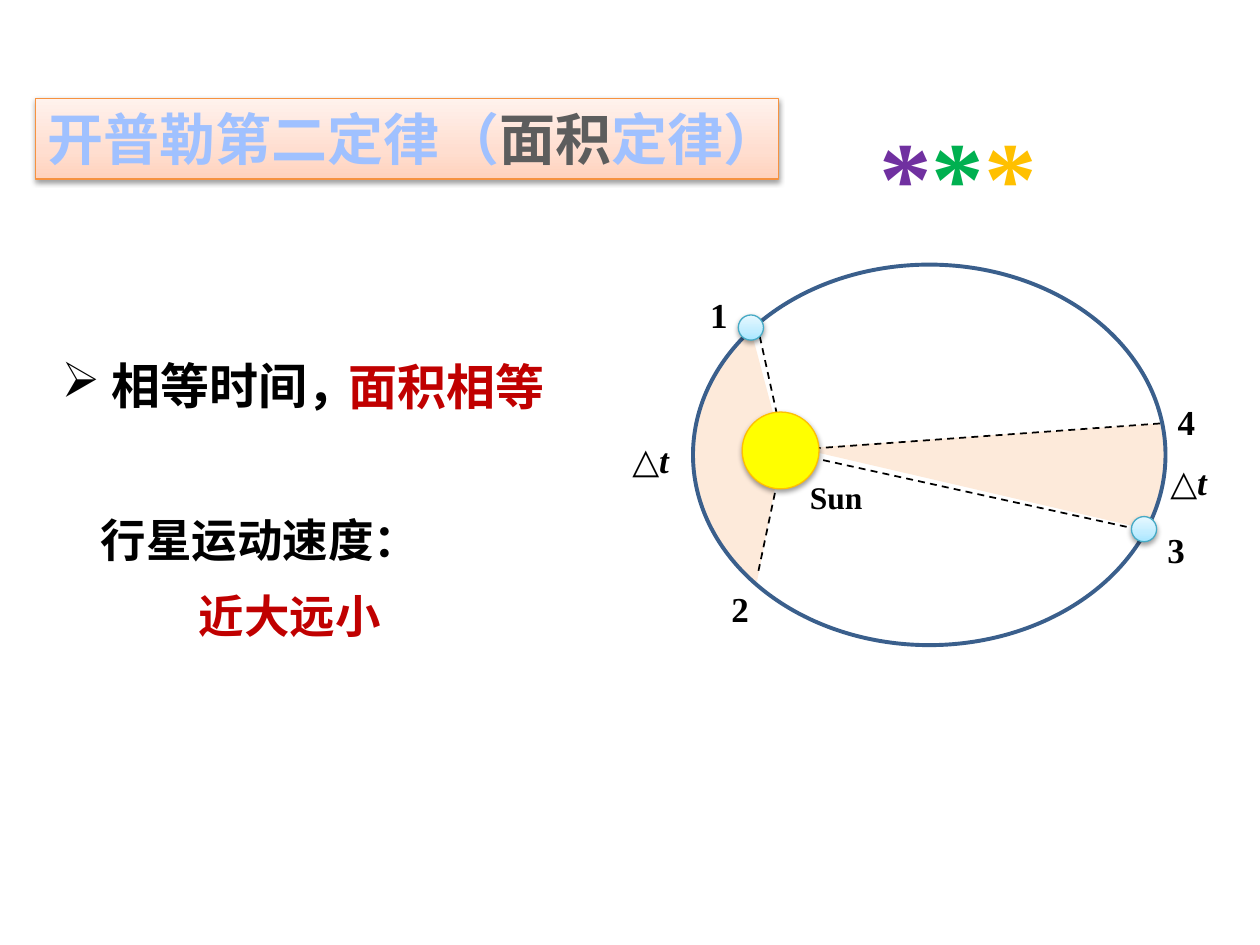
from copy import deepcopy
from math import cos, radians, sin

from lxml.etree import SubElement
from pptx import Presentation
from pptx.dml.color import RGBColor
from pptx.enum.dml import MSO_LINE_DASH_STYLE as Dash
from pptx.enum.shapes import MSO_CONNECTOR as Connector, MSO_SHAPE as Shape
from pptx.enum.text import MSO_ANCHOR as Anchor, MSO_AUTO_SIZE as AutoSize, PP_ALIGN as Align
from pptx.oxml.ns import qn
from pptx.util import Inches, Pt

BLACK = RGBColor(0x00, 0x00, 0x00)
RED = RGBColor(0xC0, 0x00, 0x00)
PURPLE = RGBColor(0x70, 0x30, 0xA0)
GREEN = RGBColor(0x00, 0xB0, 0x50)
GOLD = RGBColor(0xFF, 0xC0, 0x00)
YELLOW = RGBColor(0xFF, 0xFF, 0x00)
TITLE_BLUE = RGBColor(0xA0, 0xC1, 0xFF)
TITLE_GREY = RGBColor(0x5D, 0x5D, 0x5D)
ORBIT_BLUE = RGBColor(0x3A, 0x5F, 0x8C)
PLANET_EDGE = RGBColor(0x46, 0xAA, 0xC5)
BANNER_EDGE = RGBColor(0xF6, 0x92, 0x40)
SECTOR_PEACH = RGBColor(0xFD, 0xEA, 0xDA)
# Gradients run from the bottom edge to the top edge.
PLANET_FILL = (RGBColor(0xA7, 0xE6, 0xFF), RGBColor(0xC1, 0xED, 0xFF), RGBColor(0xE7, 0xF8, 0xFF))
BANNER_FILL = (RGBColor(0xFF, 0xD2, 0xBD), RGBColor(0xFF, 0xDE, 0xD0), RGBColor(0xFF, 0xF2, 0xED))

COLUMNS, ROWS = 100, 75
ORBIT = (55, 21, 37.5, 30.2)


class Page:
    """A slide on a grid of COLUMNS by ROWS, with one style for all its elements."""

    font_name = "Times New Roman"
    stop_positions = (0, 0.35, 1)

    def __init__(self, deck):
        self.column = deck.slide_width / COLUMNS
        self.row = deck.slide_height / ROWS
        self.slide = deck.slides.add_slide(deck.slide_layouts[5])
        self.shapes = self.slide.shapes

    def point(self, x, y):
        return round(x * self.column), round(y * self.row)

    def area(self, left, top, width, height):
        return *self.point(left, top), *self.point(width, height)

    def add_spans(self, para, spans, size):
        """Add (text, colour, italic) spans to a paragraph."""
        for text, colour, *italic in spans:
            span = para.add_run()
            span.text = text
            font = span.font
            font.name, font.size, font.bold = self.font_name, Pt(size), True
            font.color.rgb = colour
            if italic:
                font.italic = italic[0]

    def title(self, area, spans, size):
        banner = self.shapes.title
        banner.left, banner.top, banner.width, banner.height = self.area(*area)
        self.gradient(banner, BANNER_FILL)
        self.outline(banner, BANNER_EDGE, 0.75)
        self.shadow(banner)
        frame = banner.text_frame
        frame.auto_size, frame.vertical_anchor = AutoSize.NONE, Anchor.TOP
        para = frame.paragraphs[0]
        para.alignment = Align.LEFT
        self.add_spans(para, spans, size)

    def text(self, area, spans, size, spacing=1.25, align=Align.LEFT, wrap=True, bullet=None):
        box = self.shapes.add_textbox(*self.area(*area))
        box.text_frame.word_wrap = wrap
        para = box.text_frame.paragraphs[0]
        para.alignment, para.line_spacing = align, spacing
        if bullet:
            SubElement(para._p.get_or_add_pPr(), qn("a:buChar"), char=bullet)
        self.add_spans(para, spans, size)

    def ellipse(self, area, edge, weight, fill=None, raised=True):
        oval = self.shapes.add_shape(Shape.OVAL, *self.area(*area))
        if fill is None:
            oval.fill.background()
        elif isinstance(fill, RGBColor):
            oval.fill.solid()
            oval.fill.fore_color.rgb = fill
        else:
            self.gradient(oval, fill)
        self.outline(oval, edge, weight)
        oval.shadow.inherit = False
        if raised:
            self.shadow(oval)

    def sector(self, apex, start, end):
        """Fill the area between an apex and the orbit's arc, in degrees clockwise."""
        left, top, width, height = ORBIT
        steps = 30
        angles = [radians(start + (end - start) * i / steps) for i in range(steps + 1)]
        arc = [self.point(left + width / 2 * (1 + cos(a)), top + height / 2 * (1 + sin(a)))
               for a in angles]
        builder = self.shapes.build_freeform(*self.point(*apex))
        builder.add_line_segments(arc, close=True)
        wedge = builder.convert_to_shape()
        wedge.fill.solid()
        wedge.fill.fore_color.rgb = SECTOR_PEACH
        wedge.line.fill.background()
        wedge.shadow.inherit = False

    def dashed_line(self, start, end):
        line = self.shapes.add_connector(Connector.STRAIGHT, *self.point(*start), *self.point(*end))
        self.outline(line, BLACK, 1)
        line.line.dash_style = Dash.DASH
        SubElement(line._element.spPr, qn("a:effectLst"))

    def outline(self, shape, colour, weight):
        shape.line.color.rgb = colour
        shape.line.width = Pt(weight)

    def gradient(self, shape, colours):
        fill = shape.fill
        fill.gradient()
        fill.gradient_angle = 90
        stops = shape._element.spPr.find(qn("a:gradFill")).find(qn("a:gsLst"))
        stops.insert(1, deepcopy(stops[0]))
        for stop, position, colour in zip(fill.gradient_stops, self.stop_positions, colours):
            stop.position = position
            stop.color.rgb = colour

    def shadow(self, shape):
        shape.shadow.inherit = False
        effects = shape._element.spPr.find(qn("a:effectLst"))
        outer = SubElement(effects, qn("a:outerShdw"), blurRad=str(Pt(3.1)), dist=str(Pt(1.6)),
                           dir="5400000", rotWithShape="0")
        colour = SubElement(outer, qn("a:srgbClr"), val=str(BLACK))
        SubElement(colour, qn("a:alpha"), val="38000")


def main():
    deck = Presentation()
    deck.slide_width, deck.slide_height = Inches(10), Inches(7.5)
    page = Page(deck)

    page.title((2.8, 7.8, 59, 6.4), [("开普勒第二定律", TITLE_BLUE)], 32)
    page.text((34.2, 7.8, 29.1, 6.4),
              [("（", TITLE_BLUE), ("面积", TITLE_GREY), ("定律）", TITLE_BLUE)],
              32, spacing=1, wrap=False)
    page.text((68.8, 5.3, 18, 12.8), [("*", c) for c in (PURPLE, GREEN, GOLD)], 60, spacing=1.3)

    page.sector((63.5, 35.6), -9.5, 23)
    page.sector((62.1, 35.6), 137, 221)
    for start, end in (((60.3, 26.7), (62.5, 36.7)), ((62.5, 34.4), (60.2, 45.3)),
                       ((62.5, 35.9), (89.8, 41.9)), ((61.7, 35.8), (92.2, 33.6))):
        page.dashed_line(start, end)
    page.ellipse(ORBIT, ORBIT_BLUE, 2.25, raised=False)
    page.ellipse((58.9, 32.7, 6.1, 6.1), GOLD, 0.75, YELLOW)
    for left, top in ((58.6, 25), (89.8, 41)):
        page.ellipse((left, top, 2, 2), PLANET_EDGE, 0.75, PLANET_FILL)

    page.text((63.3, 36.7, 8, 4.5), [("Sun", BLACK)], 18)
    for label, left, top in (("1", 54.3, 22), ("2", 56, 45.3), ("3", 90.6, 40.6), ("4", 91.4, 30.5)):
        page.text((left, top, 5.5, 4.7), [(label, BLACK)], 20, align=Align.CENTER)
    for left, top in ((49.2, 33.5), (91.9, 35.2)):
        page.text((left, top, 7, 7), [("△", BLACK), ("t", BLACK, True)], 20)

    page.text((3.9, 26.6, 25, 7), [(" 相等时间，", BLACK)], 28, bullet="➢")
    page.text((26.7, 26.6, 17.8, 6.9), [("面积相等", RED)], 28, wrap=False)
    page.text((7, 39.1, 28.1, 7), [("行星运动速度：", BLACK)], 26)
    page.text((14.8, 46.2, 16.7, 5.4), [("近大远小", RED)], 26, spacing=1, wrap=False)

    deck.save("out.pptx")


if __name__ == "__main__":
    main()
